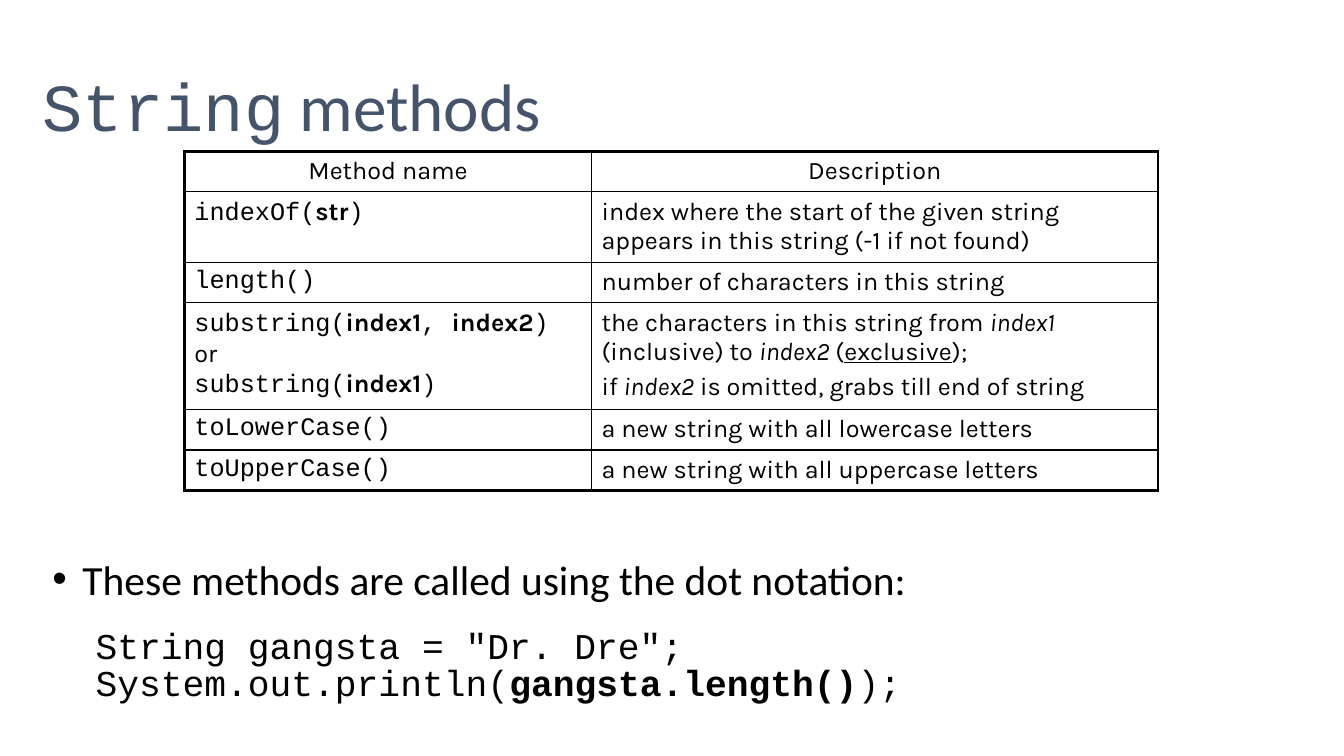
from dataclasses import dataclass

from lxml.etree import SubElement
from pptx import Presentation
from pptx.dml.color import RGBColor
from pptx.enum.text import MSO_ANCHOR, MSO_AUTO_SIZE, PP_ALIGN
from pptx.oxml.ns import qn
from pptx.util import Cm, Pt

COLORS = {"title": "44546A", "ink": "000000"}
SANS, CODE, TABLE_FONT = "Calibri", "Courier New", "Karla"
TABLE_SIZE = 18
THIN, THICK = 1, 2.25


@dataclass(frozen=True)
class Run:
    text: str
    font: str = TABLE_FONT
    bold: bool = False
    italic: bool = False
    underline: bool = False


@dataclass(frozen=True)
class Line:
    runs: list[Run]
    spacing: float = 1.0
    before: float = 0


@dataclass(frozen=True)
class Method:
    name: list[Line]
    description: list[Line]
    height: float


def code(text: str, bold: bool = False) -> Run:
    return Run(text, CODE, bold)


def param(text: str) -> Run:
    return Run(text, bold=True)


def index(text: str) -> Run:
    return Run(text, italic=True)


def plain(text: str) -> list[Line]:
    return [Line([Run(text)])]


METHODS = [
    Method(plain("Method name"), plain("Description"), 1.02),
    Method([Line([code("indexOf("), param("str"), code(")")])],
           plain("index where the start of the given string "
                 "appears in this string (-1 if not found)"), 1.78),
    Method([Line([code("length()")])],
           plain("number of characters in this string"), 1.02),
    Method([Line([code("substring("), param("index1"), code(", "),
                  param("index2"), code(")")]),
            Line([Run("or")], 0.7, 5.5),
            Line([code("substring("), param("index1"), code(")")], 0.7, 5.5)],
           [Line([Run("the characters in this string from "), index("index1"),
                  Run(" (inclusive) to "), index("index2"), Run(" ("),
                  Run("exclusive", underline=True), Run(");")]),
            Line([Run("if "), index("index2"),
                  Run(" is omitted, grabs till end of string")], before=3.5)],
           2.69),
    Method([Line([code("toLowerCase()")])],
           plain("a new string with all lowercase letters"), 1.02),
    Method([Line([code("toUpperCase()")])],
           plain("a new string with all uppercase letters"), 1.02),
]


def write_line(paragraph, line: Line, *, size: float, color: str = "ink",
               align=PP_ALIGN.LEFT) -> None:
    paragraph.alignment = align
    paragraph.line_spacing = line.spacing
    paragraph.space_before = Pt(line.before)
    paragraph.space_after = Pt(0)
    for part in line.runs:
        run = paragraph.add_run()
        run.text = part.text
        run.font.name = part.font
        run.font.size = Pt(size)
        run.font.bold = part.bold
        run.font.italic = part.italic
        run.font.underline = part.underline
        run.font.color.rgb = RGBColor.from_string(COLORS[color])


def write_lines(frame, lines: list[Line], **format) -> None:
    for number, line in enumerate(lines):
        paragraph = frame.add_paragraph() if number else frame.paragraphs[0]
        write_line(paragraph, line, **format)


def set_indent(paragraph, left: float, first: float, bullet: str = "") -> None:
    """Set the hanging indent in centimetres, with an optional bullet."""
    properties = paragraph._p.get_or_add_pPr()
    properties.set("marL", str(Cm(left)))
    properties.set("indent", str(Cm(first)))
    if bullet:
        SubElement(properties, qn("a:buFont"), typeface="Arial")
        SubElement(properties, qn("a:buChar"), char=bullet)
    else:
        SubElement(properties, qn("a:buNone"))


def set_borders(cell, widths: dict[str, float]) -> None:
    properties = cell._tc.get_or_add_tcPr()
    for side, width in widths.items():
        border = SubElement(properties, qn(f"a:ln{side}"), w=str(Pt(width)))
        fill = SubElement(border, qn("a:solidFill"))
        SubElement(fill, qn("a:srgbClr"), val=COLORS["ink"])


def add_title(slide) -> None:
    title = slide.shapes.title
    title.left, title.top = Cm(1.07), Cm(0)
    title.width, title.height = Cm(31.75), Cm(3.68)
    frame = title.text_frame
    frame.auto_size = MSO_AUTO_SIZE.NONE
    frame.word_wrap = True
    frame.vertical_anchor = MSO_ANCHOR.BOTTOM
    frame.margin_left = frame.margin_right = frame.margin_bottom = 0
    frame.margin_top = Cm(0.13)
    write_lines(frame, [Line([code("String"), Run(" methods", SANS)], 0.9)],
                size=48, color="title")


def add_methods_table(slide) -> None:
    widths = [10.26, 14.27]
    table = slide.shapes.add_table(
        len(METHODS), len(widths), Cm(4.65), Cm(3.81), Cm(sum(widths)),
        Cm(sum(method.height for method in METHODS))).table
    table.first_row = table.horz_banding = False
    for column, width in zip(table.columns, widths):
        column.width = Cm(width)
    last = len(METHODS) - 1
    for row, method in enumerate(METHODS):
        table.rows[row].height = Cm(method.height)
        for column, lines in enumerate((method.name, method.description)):
            cell = table.cell(row, column)
            set_borders(cell, {"L": THIN if column else THICK,
                               "R": THICK if column else THIN,
                               "T": THIN if row else THICK,
                               "B": THICK if row == last else THIN})
            cell.fill.background()
            cell.margin_left = cell.margin_right = Cm(0.25)
            cell.margin_top = cell.margin_bottom = Cm(0.13)
            write_lines(cell.text_frame, lines, size=TABLE_SIZE,
                        align=PP_ALIGN.LEFT if row else PP_ALIGN.CENTER)


def add_usage(slide) -> None:
    frame = slide.shapes.add_textbox(
        Cm(1.07), Cm(14.2), Cm(31.75), Cm(3.86)).text_frame
    frame.word_wrap = True
    frame.margin_top = frame.margin_bottom = 0
    notation = frame.paragraphs[0]
    write_line(notation, Line([Run(
        "These methods are called using the dot notation:", SANS)], 0.8),
        size=29.6)
    set_indent(notation, 0.76, -0.76, "•")
    example = [
        Line([code('String gangsta = "Dr. Dre";')], 0.7, 22.5),
        Line([code("System.out.println("), code("gangsta.length()", True),
              code(");")], 0.7, 5),
    ]
    for line in example:
        statement = frame.add_paragraph()
        write_line(statement, line, size=25.9)
        set_indent(statement, 1.78, -0.69)


def main() -> None:
    deck = Presentation()
    deck.slide_width, deck.slide_height = Cm(33.87), Cm(19.05)
    slide = deck.slides.add_slide(deck.slide_layouts[5])
    add_title(slide)
    add_methods_table(slide)
    add_usage(slide)
    deck.save("out.pptx")


if __name__ == "__main__":
    main()
